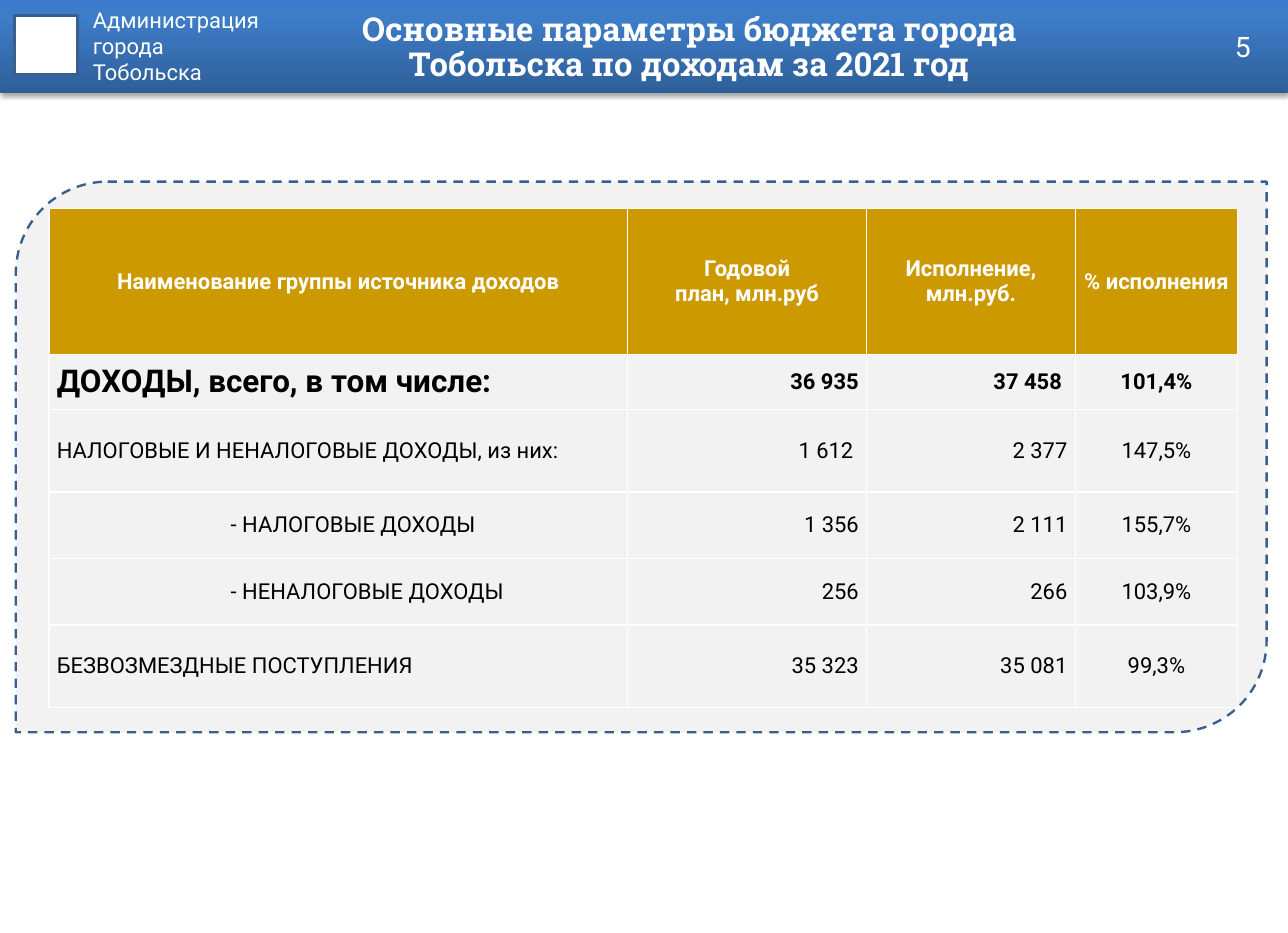
from copy import deepcopy
from dataclasses import dataclass
from typing import Any

from pptx import Presentation
from pptx.dml.color import RGBColor
from pptx.enum.dml import MSO_LINE
from pptx.enum.shapes import MSO_SHAPE
from pptx.enum.text import MSO_ANCHOR, MSO_AUTO_SIZE, PP_ALIGN
from pptx.oxml import parse_xml
from pptx.oxml.ns import nsdecls, qn
from pptx.util import Pt

LEFT, CENTER, RIGHT = PP_ALIGN.LEFT, PP_ALIGN.CENTER, PP_ALIGN.RIGHT
TOP, MIDDLE = MSO_ANCHOR.TOP, MSO_ANCHOR.MIDDLE
RECTANGLE, DIAGONAL = MSO_SHAPE.RECTANGLE, MSO_SHAPE.ROUND_2_DIAG_RECTANGLE
DASH, NO_AUTOFIT = MSO_LINE.DASH, MSO_AUTO_SIZE.NONE


@dataclass(frozen=True)
class Theme:
    white: str = "FFFFFF"
    black: str = "000000"
    outline: str = "3A5F8C"
    panel: str = "F2F2F2"
    gold: str = "CC9900"
    gradient: tuple = ((0, "2F5F99"), (0.8, "3D7CC7"), (1, "3A7CCB"))
    body_font: str = "Roboto"
    title_font: str = "Roboto Slab"
    body_size: float = 14
    number_size: float = 18
    total_size: float = 20
    title_size: float = 21


THEME = Theme()


@dataclass(frozen=True)
class Box:
    left: float
    top: float
    width: float
    height: float

    def lengths(self) -> tuple:
        return Pt(self.left), Pt(self.top), Pt(self.width), Pt(self.height)


@dataclass(frozen=True)
class TextStyle:
    size: float = THEME.body_size
    color: str = THEME.white
    bold: bool = False
    font: str = THEME.body_font
    align: Any = LEFT
    spacing: float = 1.0


@dataclass(frozen=True)
class IncomeRow:
    height: float
    values: tuple
    bold: bool = False
    label_size: float = THEME.body_size
    indent: float = 0


SLIDE_WIDTH, SLIDE_HEIGHT = 822.24, 595.44
COLUMN_WIDTHS = (369.4, 152.6, 133.2, 103.7)
COLUMN_ALIGNS = (LEFT, RIGHT, RIGHT, CENTER)
HEADER_HEIGHT = 92.9
HEADINGS = ("Наименование группы источника доходов", "Годовой\nплан, млн.руб",
            "Исполнение, млн.руб.", "% исполнения")
INCOME_ROWS = (
    IncomeRow(35.3, ("ДОХОДЫ, всего, в том числе:", "36 935", "37 458 ", "101,4%"),
              bold=True, label_size=THEME.total_size),
    IncomeRow(52.6, ("НАЛОГОВЫЕ И НЕНАЛОГОВЫЕ ДОХОДЫ, из них:", "1 612 ", "2 377", "147,5%")),
    IncomeRow(42.5, ("- НАЛОГОВЫЕ ДОХОДЫ", "1 356", "2 111", "155,7%"), indent=111),
    IncomeRow(42.5, ("- НЕНАЛОГОВЫЕ ДОХОДЫ", "256", "266", "103,9%"), indent=111),
    IncomeRow(52.6, ("БЕЗВОЗМЕЗДНЫЕ ПОСТУПЛЕНИЯ", "35 323", "35 081", "99,3%")),
)


def set_attributes(target: Any, values: dict) -> None:
    for name, value in values.items():
        setattr(target, name, value)


def write_text(text_frame: Any, text: str, style: TextStyle) -> None:
    text_frame.text = text
    for paragraph in text_frame.paragraphs:
        set_attributes(paragraph, {"alignment": style.align, "line_spacing": style.spacing})
        for run in paragraph.runs:
            set_attributes(run.font, {"name": style.font, "size": Pt(style.size), "bold": style.bold})
            run.font.color.rgb = RGBColor.from_string(style.color)


def format_frame(text_frame: Any, anchor: Any) -> None:
    set_attributes(text_frame, {
        "word_wrap": True, "auto_size": NO_AUTOFIT, "vertical_anchor": anchor,
        "margin_left": Pt(7.9), "margin_right": Pt(7.9),
        "margin_top": Pt(4), "margin_bottom": Pt(4)})


def add_text(slide: Any, box: Box, text: str, style: TextStyle, anchor: Any) -> None:
    text_frame = slide.shapes.add_textbox(*box.lengths()).text_frame
    format_frame(text_frame, anchor)
    write_text(text_frame, text, style)


def add_outlined(slide: Any, kind: Any, box: Box, fill: str, line_width: float) -> Any:
    shape = slide.shapes.add_shape(kind, *box.lengths())
    shape.shadow.inherit = False
    shape.fill.solid()
    shape.fill.fore_color.rgb = RGBColor.from_string(fill)
    shape.line.color.rgb = RGBColor.from_string(THEME.outline)
    shape.line.width = Pt(line_width)
    return shape


def add_banner(slide: Any, box: Box) -> None:
    banner = slide.shapes.add_shape(RECTANGLE, *box.lengths())
    banner.line.fill.background()
    banner.fill.gradient()
    banner.fill.gradient_angle = 90
    properties = banner._element.spPr
    stop_list = properties.find(".//" + qn("a:gsLst"))
    stop_list.append(deepcopy(stop_list[0]))
    for stop, (position, color) in zip(banner.fill.gradient_stops, THEME.gradient):
        stop.position = position
        stop.color.rgb = RGBColor.from_string(color)
    banner.shadow.inherit = False
    properties.find(qn("a:effectLst")).append(parse_xml(
        f'<a:outerShdw {nsdecls("a")} blurRad="{Pt(3.1)}" dist="{Pt(1.8)}" dir="5400000" '
        f'rotWithShape="0"><a:srgbClr val="{THEME.black}"><a:alpha val="35000"/>'
        '</a:srgbClr></a:outerShdw>'))


def format_cell(cell: Any, text: str, style: TextStyle, fill: str = "", indent: float = 0) -> None:
    write_text(cell.text_frame, text, style)
    set_attributes(cell, {
        "vertical_anchor": MIDDLE, "margin_left": Pt(5 + indent), "margin_right": Pt(5),
        "margin_top": 0, "margin_bottom": 0})
    properties = cell._tc.get_or_add_tcPr()
    for side in ("lnL", "lnR", "lnT", "lnB"):
        properties.append(parse_xml(
            f'<a:{side} {nsdecls("a")} w="{Pt(1)}"><a:solidFill>'
            f'<a:srgbClr val="{THEME.white}"/></a:solidFill></a:{side}>'))
    if fill:
        cell.fill.solid()
        cell.fill.fore_color.rgb = RGBColor.from_string(fill)
    else:
        cell.fill.background()


def add_income_table(slide: Any, left: float, top: float) -> None:
    heights = (HEADER_HEIGHT, *(row.height for row in INCOME_ROWS))
    box = Box(left, top, sum(COLUMN_WIDTHS), sum(heights))
    table = slide.shapes.add_table(len(heights), len(COLUMN_WIDTHS), *box.lengths()).table
    table.horz_banding = False
    for column, width in zip(table.columns, COLUMN_WIDTHS):
        column.width = Pt(width)
    for row, height in zip(table.rows, heights):
        row.height = Pt(height)
    for index, heading in enumerate(HEADINGS):
        format_cell(table.cell(0, index), heading, TextStyle(bold=True, align=CENTER), THEME.gold)
    for row_index, row in enumerate(INCOME_ROWS, start=1):
        for index, (value, align) in enumerate(zip(row.values, COLUMN_ALIGNS)):
            is_label = index == 0
            style = TextStyle(size=row.label_size if is_label else THEME.body_size,
                              color=THEME.black, bold=row.bold, align=align)
            format_cell(table.cell(row_index, index), value, style,
                        indent=row.indent if is_label else 0)


def add_title(slide: Any, box: Box, text: str) -> None:
    title = slide.shapes.title
    set_attributes(title, dict(zip(("left", "top", "width", "height"), box.lengths())))
    format_frame(title.text_frame, MIDDLE)
    write_text(title.text_frame, text, TextStyle(
        size=THEME.title_size, bold=True, font=THEME.title_font, align=CENTER, spacing=0.9))
    # Bring the title in front of the banner
    slide.shapes._spTree.append(title._element)


def main() -> None:
    presentation = Presentation()
    presentation.slide_width, presentation.slide_height = Pt(SLIDE_WIDTH), Pt(SLIDE_HEIGHT)
    slide = presentation.slides.add_slide(presentation.slide_layouts[5])

    # Banner with emblem and city administration
    add_banner(slide, Box(0, 0, SLIDE_WIDTH, 59.4))
    add_outlined(slide, RECTANGLE, Box(9.4, 10.1, 40.3, 37.4), THEME.white, 2)
    add_text(slide, Box(51.4, 0, 193, 75.6), "Администрация\nгорода\nТобольска", TextStyle(), TOP)

    # Panel, title and income table
    panel = add_outlined(slide, DIAGONAL, Box(10.1, 115.9, 798.5, 351.4), THEME.panel, 1.5)
    panel.line.dash_style = DASH
    add_title(slide, Box(195.8, 2.9, 488.2, 56.2),
              "Основные параметры бюджета города Тобольска по доходам за 2021 год")
    add_income_table(slide, 31.3, 133.2)

    # Page number
    add_text(slide, Box(614.9, 13.7, 191.5, 31.7), "5",
             TextStyle(size=THEME.number_size, align=RIGHT), MIDDLE)
    presentation.save("out.pptx")


if __name__ == "__main__":
    main()
